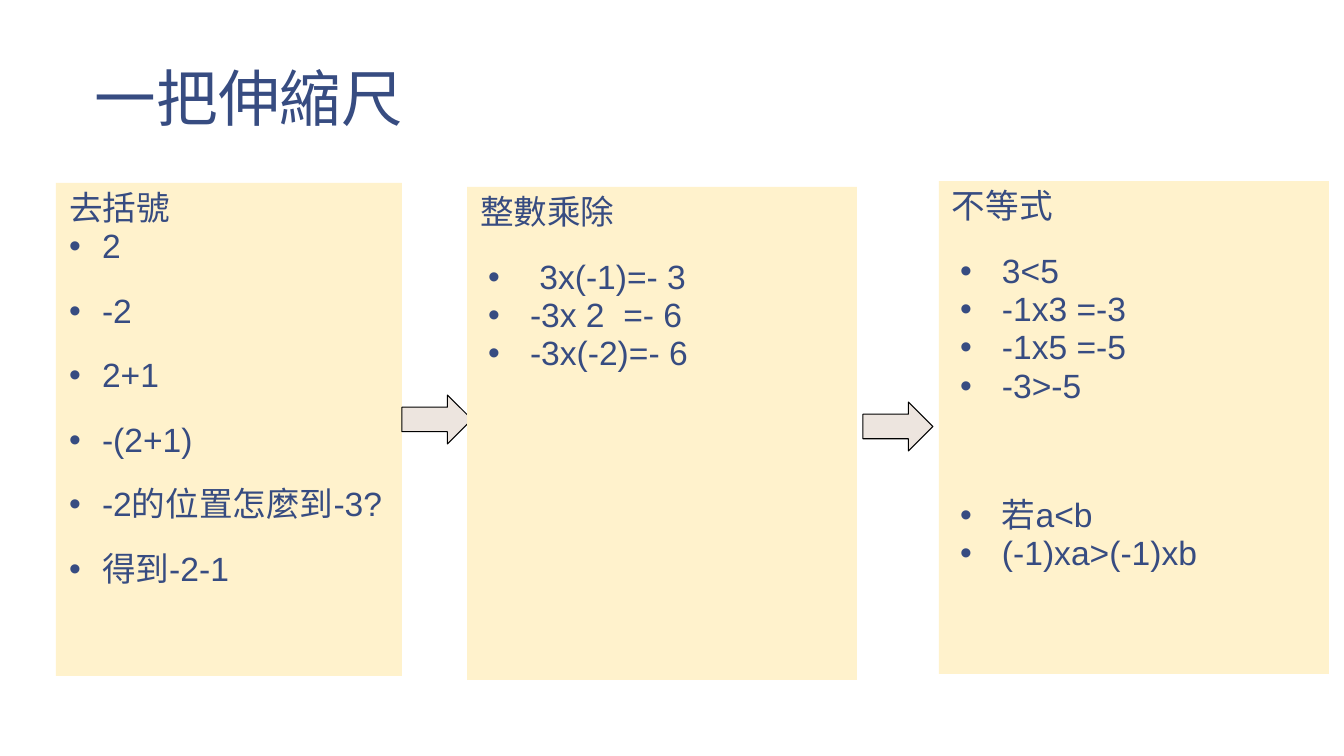
from lxml import etree
from pptx import Presentation
from pptx.dml.color import RGBColor
from pptx.enum import shapes, text
from pptx.oxml.ns import qn
from pptx.util import Pt

PX = 12192000 / 1344  # EMU in one px
COLORS = {"ink": "374C81", "panel": "FFF2CC", "arrow": "EDE5DF", "outline": "000000"}
FONT = {"name": "Arial", "size": Pt(24)}
GAP = 18.7  # points between separated lines
PANEL_H = 493


def px(n):
    return round(n * PX)


def rgb(name):
    return RGBColor.from_string(COLORS[name])


def add_box(s, box, anchor):
    sp = s.shapes.add_textbox(*map(px, box))
    tf = sp.text_frame
    frame = {"word_wrap": True, "auto_size": text.MSO_AUTO_SIZE.NONE,
             "vertical_anchor": anchor, "margin_left": px(13), "margin_right": px(13),
             "margin_top": px(7), "margin_bottom": px(7)}
    for key, value in frame.items():
        setattr(tf, key, value)
    return sp


def write(p, words, spacing, before=0, **font):
    p.line_spacing = spacing
    p.space_before = Pt(before)
    r = p.add_run()
    r.text = words
    for key, value in {**FONT, **font}.items():
        setattr(r.font, key, value)
    r.font.color.rgb = rgb("ink")


def add_bullet(p, indent, hanging):
    pPr = p._p.get_or_add_pPr()
    pPr.set("marL", str(px(indent)))
    pPr.set("indent", str(-px(hanging)))
    color = etree.SubElement(pPr, qn("a:buClr"))
    etree.SubElement(color, qn("a:srgbClr"), val=COLORS["ink"])
    etree.SubElement(pPr, qn("a:buFont"), typeface="Arial")
    etree.SubElement(pPr, qn("a:buChar"), char="•")


def add_title(s, box, words):
    sp = add_box(s, box, text.MSO_ANCHOR.BOTTOM)
    write(sp.text_frame.paragraphs[0], words, 0.85, size=Pt(44))


def add_panel(s, box, heading, indents, items):
    sp = add_box(s, box, text.MSO_ANCHOR.TOP)
    sp.fill.solid()
    sp.fill.fore_color.rgb = rgb("panel")
    write(sp.text_frame.paragraphs[0], heading, 0.95)
    for words, before in items:
        p = sp.text_frame.add_paragraph()
        add_bullet(p, *indents)
        write(p, words, 0.95, before)


def add_arrow(s, x, y):
    sp = s.shapes.add_shape(shapes.MSO_SHAPE.RIGHT_ARROW, *map(px, (x, y, 70, 49)))
    sp.shadow.inherit = False
    sp.fill.solid()
    sp.fill.fore_color.rgb = rgb("arrow")
    sp.line.color.rgb = rgb("outline")
    sp.line.width = Pt(0.75)


def main():
    prs = Presentation()
    prs.slide_width, prs.slide_height = px(1344), px(756)
    s = prs.slides.add_slide(prs.slide_layouts[6])

    add_title(s, (82, 28, 1120, 113), "一把伸縮尺")

    # Removing brackets
    add_panel(s, (56, 183, 346, PANEL_H), "去括號", (33, 33), [
        ("2", 0), ("-2", GAP), ("2+1", GAP), ("-(2+1)", GAP),
        ("-2的位置怎麼到-3?", GAP), ("得到-2-1", GAP)])
    add_arrow(s, 402, 395)

    # Multiplying and dividing integers
    add_panel(s, (467, 187, 390, PANEL_H), "整數乘除", (50, 42), [
        (" 3x(-1)=- 3", GAP), ("-3x 2  =- 6", 0), ("-3x(-2)=- 6", 0)])
    add_arrow(s, 863, 402)

    # Inequalities: the rule stands apart from the examples
    add_panel(s, (939, 181, 390, PANEL_H), "不等式", (50, 42), [
        ("3<5", GAP), ("-1x3 =-3", 0), ("-1x5 =-5", 0), ("-3>-5", 0),
        ("若a<b", 65), ("(-1)xa>(-1)xb", 0)])

    prs.save("out.pptx")


if __name__ == "__main__":
    main()
